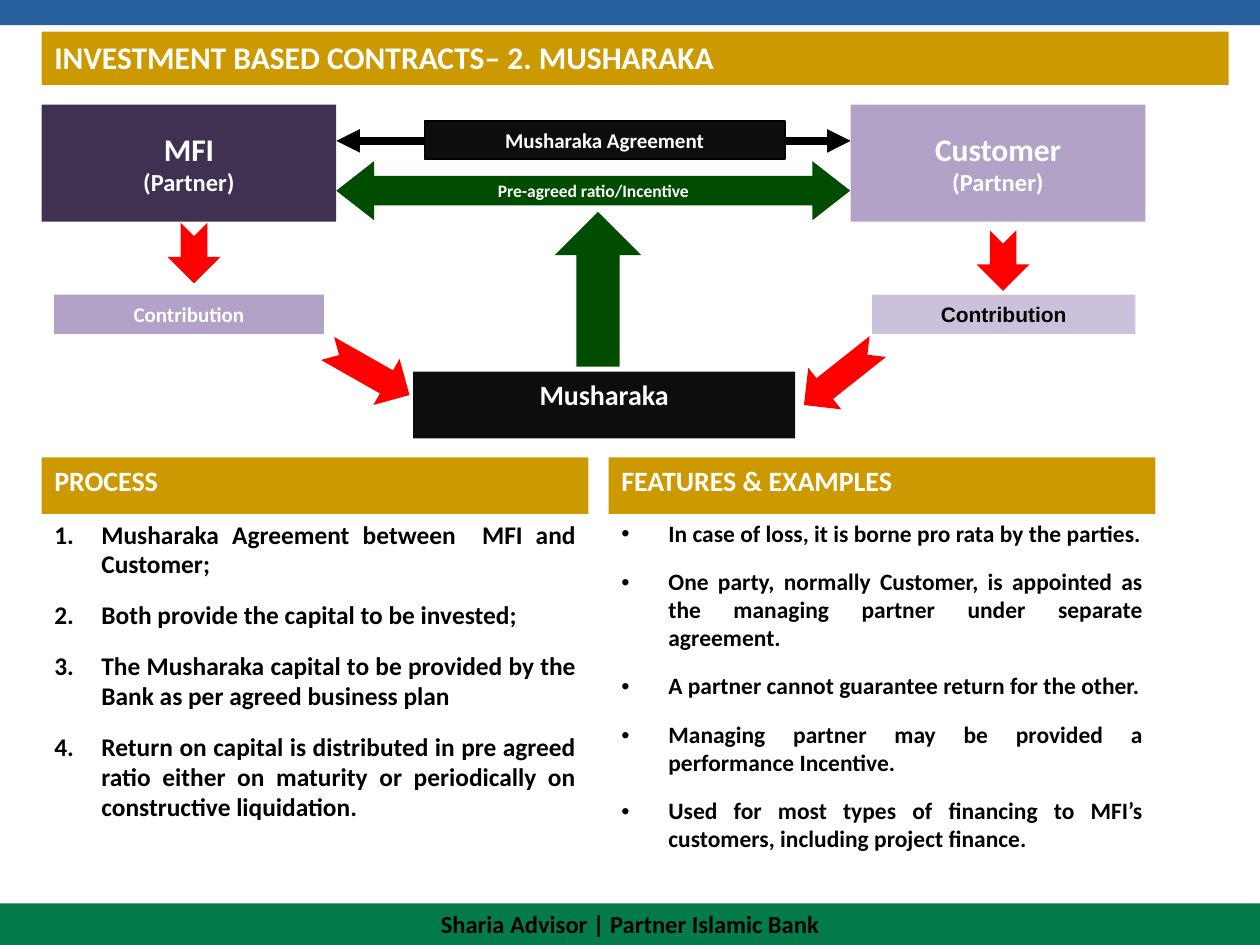
from dataclasses import dataclass
from typing import Optional

from lxml import etree
from pptx import Presentation
from pptx.dml.color import RGBColor
from pptx.enum import shapes, text
from pptx.oxml.ns import qn
from pptx.util import Cm, Pt

COLORS = {
    "blue": "275F9D", "green": "027B49", "gold": "CC9900", "white": "FFFFFF",
    "black": "000000", "ink": "0D0D0D", "purple": "403152", "lilac": "B3A2C7",
    "pale": "CCC1DA", "red": "FF0000", "dark green": "004C00",
}
KIND = shapes.MSO_SHAPE
ALIGN = text.PP_ALIGN
ANCHOR = text.MSO_ANCHOR
LEFT = 0.84
COLUMN_WIDTH = 11.02
RIGHT_COLUMN = 12.27
HEADING_TOP, HEADING_HEIGHT = 9.22, 1.14
LIST_HEIGHT = 7.01
INDENT = 0.95


@dataclass
class Block:
    """A filled shape, in centimetres, with one (text, size) pair per line."""
    left: float
    top: float
    width: float
    height: float
    fill: str
    lines: tuple = ()
    kind: int = KIND.RECTANGLE
    rotation: float = 0
    font: str = "Calibri"
    color: str = "white"
    anchor: int = ANCHOR.MIDDLE
    outline: Optional[str] = None


@dataclass
class Column:
    left: float
    heading: str
    items: tuple
    size: float
    bullet_tag: str
    bullet: dict


BARS = [
    Block(0, 0, 25.4, 0.51, "blue"),
    Block(0, 18.21, 25.4, 0.84, "green"),
]
BOXES = [
    Block(8.33, 7.49, 7.7, 1.35, "ink", (("Musharaka", 16),), anchor=ANCHOR.TOP),
    Block(1.09, 5.94, 5.44, 0.79, "lilac", (("Contribution", 12),)),
    Block(17.58, 5.94, 5.31, 0.79, "pale", (("Contribution", 12),),
          font="Arial", color="black"),
    Block(LEFT, 2.11, 5.94, 2.36, "purple", (("MFI", 18), ("(Partner)", 14))),
    Block(17.15, 2.11, 5.94, 2.36, "lilac", (("Customer", 18), ("(Partner)", 14))),
    Block(8.56, 2.44, 7.26, 0.76, "ink", (("Musharaka Agreement", 12),),
          outline="black"),
]
RED_ARROWS = [
    Block(left, top, width, 1.07, "red", kind=KIND.NOTCHED_RIGHT_ARROW, rotation=rotation)
    for left, top, width, rotation in (
        (16, 7.04, 1.9, 141.6), (6.48, 6.96, 1.9, 29.6),
        (3.3, 4.57, 1.22, 90), (19.61, 4.72, 1.22, 90))
]
RATIO_ARROW = Block(6.78, 3.25, 10.36, 1.19, "dark green",
                    (("Pre-agreed ratio/Incentive", 10),), KIND.LEFT_RIGHT_ARROW)
PROFIT_ARROW = Block(11.18, 4.27, 1.75, 3.12, "dark green",
                     kind=KIND.DOWN_ARROW, rotation=180)
COLUMNS = [
    Column(LEFT, "PROCESS", (
        "Musharaka Agreement between  MFI and Customer;",
        "Both provide the capital to be invested;",
        "The Musharaka capital to be provided by the Bank as per agreed business plan",
        "Return on capital is distributed in pre agreed ratio either on maturity "
        "or periodically on constructive liquidation.",
    ), 14.5, "a:buAutoNum", {"type": "arabicPeriod"}),
    Column(RIGHT_COLUMN, "FEATURES & EXAMPLES", (
        "In case of loss, it is borne pro rata by the parties.",
        "One party, normally Customer, is appointed as the managing partner "
        "under separate agreement.",
        "A partner cannot guarantee return for the other.",
        "Managing partner may be provided a performance Incentive.",
        "Used for most types of financing to MFI’s customers, including project finance.",
    ), 13.4, "a:buChar", {"char": "•"}),
]


def rgb(name: str) -> RGBColor:
    return RGBColor.from_string(COLORS[name])


def format_paragraph(paragraph, size: float, color: str, align: int,
                     font: str = "Calibri") -> None:
    paragraph.alignment = align
    for run in paragraph.runs:
        run.font.name = font
        run.font.size = Pt(size)
        run.font.bold = True
        run.font.color.rgb = rgb(color)


def place(shape, left: float, top: float, width: float, height: float) -> None:
    shape.left, shape.top = Cm(left), Cm(top)
    shape.width, shape.height = Cm(width), Cm(height)
    frame = shape.text_frame
    frame.word_wrap = True
    frame.auto_size = text.MSO_AUTO_SIZE.NONE
    frame.vertical_anchor = ANCHOR.TOP


def fill_heading(shape, heading: str, size: float) -> None:
    shape.fill.solid()
    shape.fill.fore_color.rgb = rgb("gold")
    shape.text_frame.text = heading
    paragraph = shape.text_frame.paragraphs[0]
    paragraph.space_before = Pt(0)
    format_paragraph(paragraph, size, "white", ALIGN.LEFT)


def fill_list(shape, column: Column) -> None:
    frame = shape.text_frame
    frame.text = "\n".join(column.items)
    for index, paragraph in enumerate(frame.paragraphs):
        properties = paragraph._p.get_or_add_pPr()
        properties.set("marL", str(Cm(INDENT)))
        properties.set("indent", str(-Cm(INDENT)))
        if column.bullet_tag == "a:buChar":
            etree.SubElement(properties, qn("a:buFont"), typeface="Arial")
        etree.SubElement(properties, qn(column.bullet_tag), **column.bullet)
        paragraph.space_before = Pt(12 if index else 0)
        paragraph.line_spacing = 0.98
        format_paragraph(paragraph, column.size, "black", ALIGN.JUSTIFY)


def draw_block(slide, block: Block):
    shape = slide.shapes.add_shape(block.kind, Cm(block.left), Cm(block.top),
                                   Cm(block.width), Cm(block.height))
    shape.shadow.inherit = False
    shape.rotation = block.rotation
    shape.fill.solid()
    shape.fill.fore_color.rgb = rgb(block.fill)
    if block.outline:
        shape.line.color.rgb = rgb(block.outline)
        shape.line.width = Pt(1)
    else:
        shape.line.fill.background()
    if block.lines:
        frame = shape.text_frame
        frame.vertical_anchor = block.anchor
        frame.text = "\n".join(line for line, _ in block.lines)
        for paragraph, (_, size) in zip(frame.paragraphs, block.lines):
            format_paragraph(paragraph, size, block.color, ALIGN.CENTER, block.font)
    return shape


def draw_agreement_line(slide) -> None:
    connector = slide.shapes.add_connector(
        shapes.MSO_CONNECTOR.STRAIGHT, Cm(6.78), Cm(2.84), Cm(17.15), Cm(2.84))
    connector.line.color.rgb = rgb("black")
    connector.line.width = Pt(4.5)
    line = connector.line._get_or_add_ln()
    for tag in ("a:headEnd", "a:tailEnd"):
        etree.SubElement(line, qn(tag), type="triangle")
    etree.SubElement(connector._element.spPr, qn("a:effectLst"))


def main() -> None:
    presentation = Presentation()
    presentation.slide_width, presentation.slide_height = Cm(25.4), Cm(19.05)
    comparison_layout = presentation.slide_layouts[4]
    slide = presentation.slides.add_slide(comparison_layout)

    title, *bodies = slide.placeholders
    place(title, LEFT, 0.64, 23.93, 1.07)
    fill_heading(title, "INVESTMENT BASED CONTRACTS– 2. MUSHARAKA", 18)
    for column, heading, body in zip(COLUMNS, bodies[::2], bodies[1::2]):
        place(heading, column.left, HEADING_TOP, COLUMN_WIDTH, HEADING_HEIGHT)
        fill_heading(heading, column.heading, 16)
        place(body, column.left, HEADING_TOP + HEADING_HEIGHT, COLUMN_WIDTH, LIST_HEIGHT)
        fill_list(body, column)

    for bar in BARS:
        draw_block(slide, bar)
    draw_agreement_line(slide)
    for block in BOXES + RED_ARROWS:
        draw_block(slide, block)
    ratio_arrow = draw_block(slide, RATIO_ARROW)
    ratio_arrow.adjustments[1] = 0.64
    draw_block(slide, PROFIT_ARROW)

    footer = slide.shapes.add_textbox(0, 0, 0, 0)
    place(footer, 6.99, 18.21, 11.43, 0.76)
    footer.text_frame.text = "Sharia Advisor | Partner Islamic Bank"
    format_paragraph(footer.text_frame.paragraphs[0], 14, "black", ALIGN.CENTER)

    presentation.save("out.pptx")


if __name__ == "__main__":
    main()
